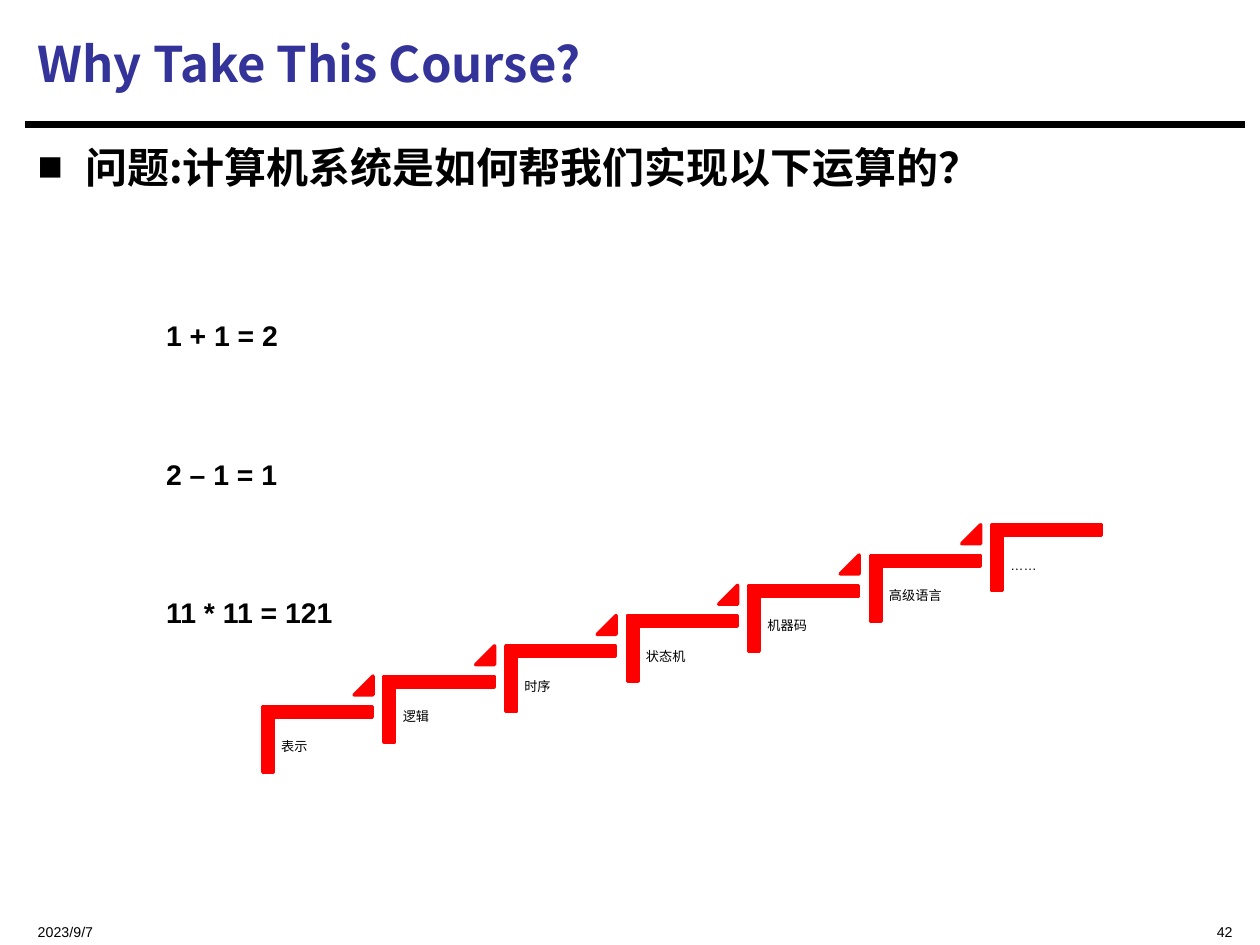
from lxml import etree
from pptx import Presentation
from pptx.dml.color import RGBColor
from pptx.enum.shapes import MSO_CONNECTOR, MSO_SHAPE
from pptx.enum.text import MSO_ANCHOR, MSO_AUTO_SIZE, PP_ALIGN
from pptx.oxml.ns import qn
from pptx.util import Cm, Pt

STRAIGHT = MSO_CONNECTOR.STRAIGHT
CORNER, TRIANGLE = MSO_SHAPE.CORNER, MSO_SHAPE.ISOSCELES_TRIANGLE
TOP, MIDDLE = MSO_ANCHOR.TOP, MSO_ANCHOR.MIDDLE
LEFT, RIGHT = PP_ALIGN.LEFT, PP_ALIGN.RIGHT
NO_AUTOFIT = MSO_AUTO_SIZE.NONE

TITLE = "Why Take This Course?"
QUESTION = "问题:计算机系统是如何帮我们实现以下运算的？"
EQUATIONS = ["1 + 1 = 2", "2 – 1 = 1", "11 * 11 = 121"]
STEPS = ["表示", "逻辑", "时序", "状态机", "机器码", "高级语言", "……"]
DATE, PAGE = "2023/9/7", "42"

COLORS = {"title": "333399", "text": "000000", "step": "FF0000"}
HEADING_FONT, BODY_FONT = "Noto Sans CJK SC", "Arial"
STEP_DX, STEP_DY = 2.45, -0.61
BAR_SHARE = 0.16


def rgb(name):
    """Return the named palette colour."""
    return RGBColor.from_string(COLORS[name])


def write(sp, lines, size, font=BODY_FONT, color="text", bold=False,
          align=LEFT, anchor=TOP, gap=0, lowered=False):
    """Fill a shape with one paragraph per line in a shared style."""
    tf = sp.text_frame
    tf.word_wrap, tf.auto_size, tf.vertical_anchor = True, NO_AUTOFIT, anchor
    tf.text = "\n".join(lines)
    for i, p in enumerate(tf.paragraphs):
        p.alignment = align
        p.space_before = Pt(gap if i else 0)
        p.font.size, p.font.bold, p.font.name = Pt(size), bold, font
        p.font.color.rgb = rgb(color)
        for r in p.runs:
            props = r.font._element
            etree.SubElement(props, qn("a:ea")).set("typeface", HEADING_FONT)
            if lowered:
                props.set("baseline", "-25000")
    return tf


def add_text(slide, box, lines, size, **style):
    """Add a text box at a place given in centimetres."""
    sp = slide.shapes.add_textbox(*map(Cm, box))
    return write(sp, lines, size, **style)


def add_red_shape(slide, kind, box, adjustments, rotation=0):
    """Add a red preset shape at a place given in centimetres."""
    sp = slide.shapes.add_shape(kind, *map(Cm, box))
    sp.shadow.inherit = False
    sp.rotation = rotation
    for i, value in enumerate(adjustments):
        sp.adjustments[i] = value
    sp.fill.solid()
    sp.fill.fore_color.rgb = rgb("step")
    sp.line.color.rgb = rgb("step")
    sp.line.width = Pt(2)


def add_heading(slide):
    """Place the title, its rule and the bulleted question."""
    title = slide.shapes.title
    title.left, title.top, title.width, title.height = map(Cm, (0.51, 0.2, 24.56, 2.13))
    write(title, [TITLE], 28, font=HEADING_FONT, color="title", bold=True, anchor=MIDDLE)

    rule = slide.shapes.add_connector(STRAIGHT, Cm(0.51), Cm(2.51), Cm(25.1), Cm(2.51))
    rule.line.color.rgb = rgb("text")
    rule.line.width = Pt(3.75)
    etree.SubElement(rule._element.spPr, qn("a:effectLst"))

    tf = add_text(slide, (0.51, 2.72, 24.56, 1.8), [QUESTION], 24,
                  font=HEADING_FONT, bold=True)
    props = tf.paragraphs[0]._p.get_or_add_pPr()
    props.set("marL", str(Cm(0.96)))
    props.set("indent", str(-Cm(0.96)))
    bullet_font = etree.Element(qn("a:buFont"), typeface=BODY_FONT)
    bullet = etree.Element(qn("a:buChar"), char="■")
    place = 1 if props.find(qn("a:spcBef")) is not None else 0
    props.insert(place, bullet_font)
    props.insert(place + 1, bullet)


def add_step(slide, index, label):
    """Draw one stair step, with a triangle unless it is the last."""
    dx, dy = index * STEP_DX, index * STEP_DY
    add_red_shape(slide, CORNER, (5.74 + dx, 13.8 + dy, 1.32, 2.21),
                  (BAR_SHARE, BAR_SHARE), rotation=90)
    tf = add_text(slide, (5.54 + dx, 14.46 + dy, 2.01, 1.75), [label], 13, lowered=True)
    tf.margin_left = tf.margin_right = tf.margin_top = tf.margin_bottom = Cm(0.13)
    tf.paragraphs[0].line_spacing = 0.9
    if index < len(STEPS) - 1:
        add_red_shape(slide, TRIANGLE, (7.14 + dx, 13.63 + dy, 0.38, 0.38), (1,))


def main():
    """Build the slide and save it."""
    prs = Presentation()
    prs.slide_width, prs.slide_height = Cm(25.4), Cm(19.05)
    slide = prs.slides.add_slide(prs.slide_layouts[5])
    add_heading(slide)
    add_text(slide, (0.51, 18.16, 6.35, 0.69), [DATE], 14, lowered=True)
    add_text(slide, (17.48, 18.16, 7.62, 0.69), [PAGE], 14, align=RIGHT, lowered=True)
    add_text(slide, (3.1, 5.63, 6.35, 6.25), EQUATIONS, 28,
             bold=True, gap=40.8, lowered=True)
    for index, label in enumerate(STEPS):
        add_step(slide, index, label)
    prs.save("out.pptx")


if __name__ == "__main__":
    main()
